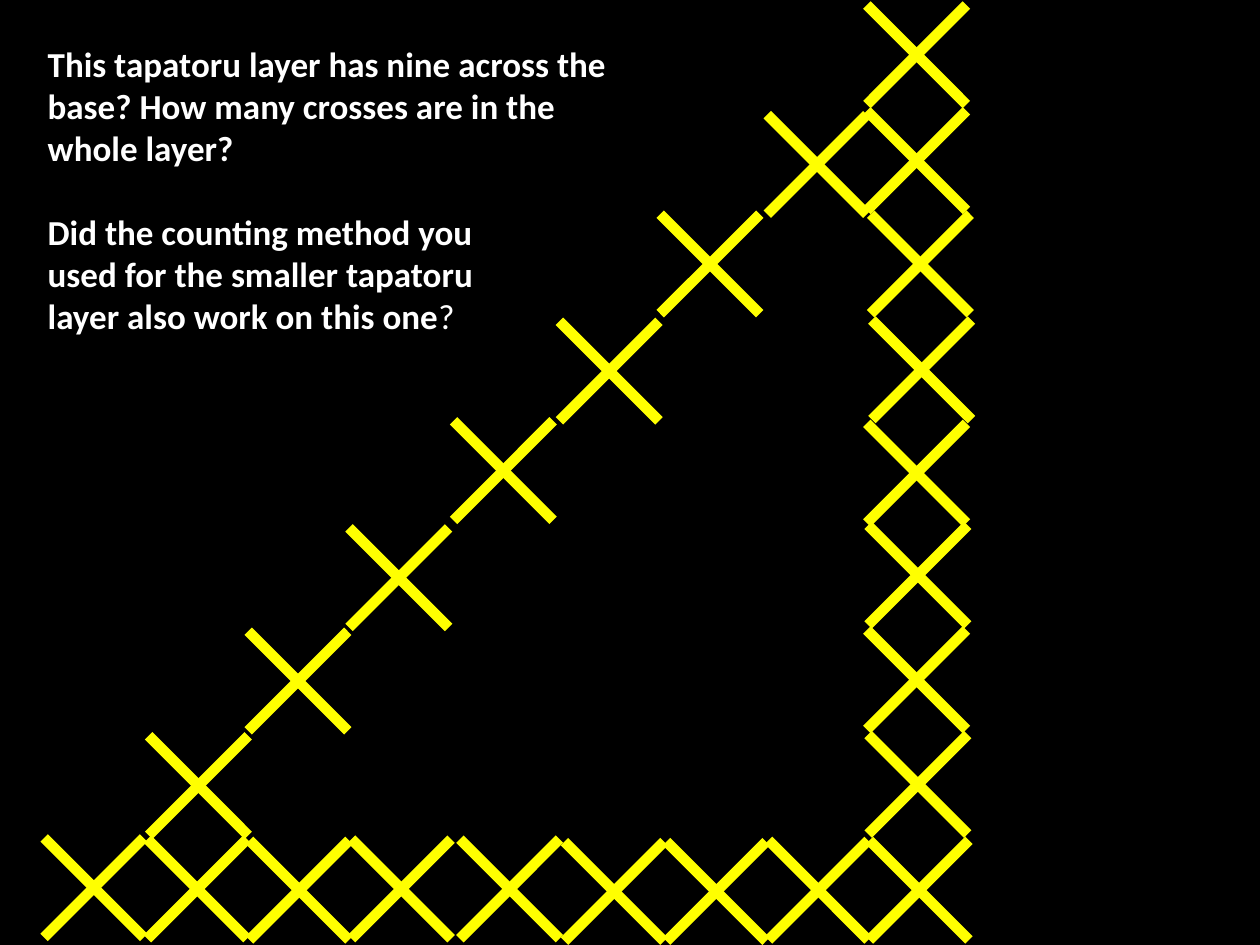
from typing import NamedTuple

import pptx
import pptx.dml.color
import pptx.enum.shapes
import pptx.enum.text
import pptx.oxml.ns
import pptx.util
from lxml import etree

Inches = pptx.util.Inches
Pt = pptx.util.Pt
RGBColor = pptx.dml.color.RGBColor

BLACK = RGBColor(0x00, 0x00, 0x00)
WHITE = RGBColor(0xFF, 0xFF, 0xFF)
YELLOW = RGBColor(0xFF, 0xFF, 0x00)
FONT = "Calibri"
CROSS_SIZE = 0.79
LINE_WIDTH = 6


class Cross(NamedTuple):
    """Top left corner of a cross, in inches."""
    left: float
    top: float


BASE = [Cross(0.35, 6.65), Cross(1.17, 6.66), Cross(1.98, 6.67),
        Cross(2.79, 6.66), Cross(3.65, 6.66), Cross(4.48, 6.68),
        Cross(5.29, 6.68), Cross(6.1, 6.67), Cross(6.9, 6.67)]
RIGHT_SIDE = [Cross(6.88, 0.04), Cross(6.88, 0.88), Cross(6.91, 1.7),
              Cross(6.92, 2.54), Cross(6.88, 3.36), Cross(6.89, 4.17),
              Cross(6.88, 5), Cross(6.89, 5.83)]
DIAGONAL = [Cross(1.18, 5.84), Cross(1.97, 5.01), Cross(2.77, 4.19),
            Cross(3.6, 3.34), Cross(4.44, 2.55), Cross(5.24, 1.7),
            Cross(6.09, 0.91)]


def add_line(shapes, x1: float, y1: float, x2: float, y2: float) -> None:
    line = shapes.add_connector(
        pptx.enum.shapes.MSO_CONNECTOR.STRAIGHT,
        Inches(x1), Inches(y1), Inches(x2), Inches(y2))
    line.line.color.rgb = YELLOW
    line.line.width = Pt(LINE_WIDTH)
    sp_pr = line._element.spPr
    etree.SubElement(sp_pr, pptx.oxml.ns.qn("a:effectLst"))


def add_cross(s, cross: Cross) -> None:
    left, top = cross
    right, bottom = left + CROSS_SIZE, top + CROSS_SIZE
    group = s.shapes.add_group_shape()
    add_line(group.shapes, left, top, right, bottom)
    add_line(group.shapes, right, top, left, bottom)


def add_text(p, text: str, size: float = 20, bold: bool = True,
             color: RGBColor = WHITE) -> None:
    """Append text to a paragraph, turning each newline into a line break."""
    for i, part in enumerate(text.split("\n")):
        if i:
            p.add_line_break()
        r = p.add_run()
        r.text = part
        r.font.name = FONT
        r.font.size = Pt(size)
        r.font.bold = bold
        r.font.color.rgb = color


def add_questions(s) -> None:
    box = s.shapes.add_textbox(Inches(0.28), Inches(0.29),
                               Inches(5.05), Inches(2.79))
    tf = box.text_frame
    tf.word_wrap = True
    tf.auto_size = pptx.enum.text.MSO_AUTO_SIZE.SHAPE_TO_FIT_TEXT
    add_text(tf.paragraphs[0], "This tapatoru layer has nine across the base? "
             "How many crosses are in the\nwhole layer?")
    p = tf.add_paragraph()
    p.space_before = Pt(24)
    add_text(p, "Did the counting method you\nused for the smaller tapatoru\n"
             "layer also work on this one")
    add_text(p, "?", bold=False)


def main() -> None:
    prs = pptx.Presentation()
    prs.slide_width, prs.slide_height = Inches(10), Inches(7.5)
    s = prs.slides.add_slide(prs.slide_layouts[6])
    s.background.fill.solid()
    s.background.fill.fore_color.rgb = BLACK
    add_questions(s)
    for cross in BASE + RIGHT_SIDE + DIAGONAL:
        add_cross(s, cross)
    prs.save("out.pptx")


if __name__ == "__main__":
    main()
